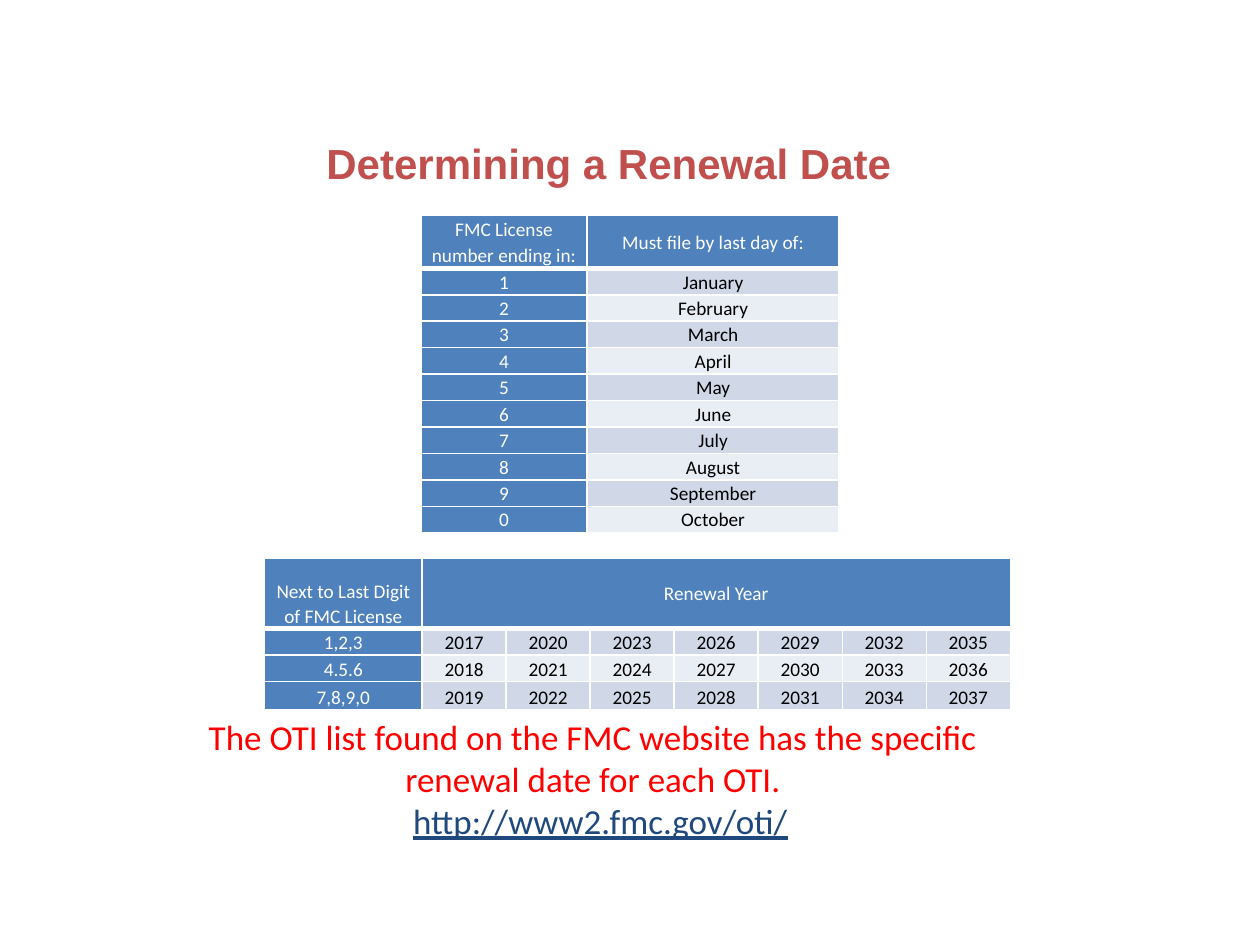
from lxml import etree
from pptx import Presentation
from pptx.dml.color import RGBColor
from pptx.enum.text import MSO_ANCHOR, PP_ALIGN
from pptx.oxml.ns import qn
from pptx.util import Inches, Pt

LEFT, CENTER = PP_ALIGN.LEFT, PP_ALIGN.CENTER
TOP, MIDDLE, BOTTOM = MSO_ANCHOR.TOP, MSO_ANCHOR.MIDDLE, MSO_ANCHOR.BOTTOM
TITLE_ONLY = 5
WHITE, BLACK, BLUE = "FFFFFF", "000000", "4F81BD"
BANDS = ("E9EDF4", "D0D8E8")

MONTHS = ["January", "February", "March", "April", "May", "June", "July",
          "August", "September", "October"]
MONTH_ROWS = [["FMC License number ending in:", "Must file by last day of:"]]
MONTH_ROWS += [[str(number % 10), month] for number, month in enumerate(MONTHS, 1)]

YEAR_ROWS = [["Next to Last Digit of FMC License", "Renewal Year"]]
YEAR_ROWS += [[digits] + [str(year) for year in range(first, first + 21, 3)]
              for first, digits in enumerate(["1,2,3", "4.5.6", "7,8,9,0"], 2017)]


def color(value):
    return RGBColor.from_string(value)


def style_paragraph(para, size, tint, font="Calibri", align=CENTER, spacing=None):
    para.alignment = align
    if spacing:
        para.line_spacing = spacing
    para.font.name = font
    para.font.size = Pt(size)
    para.font.color.rgb = color(tint)


def add_borders(cell, bottom_width):
    properties = cell._tc.get_or_add_tcPr()
    for side, width in (("L", 1), ("R", 1), ("T", 1), ("B", bottom_width)):
        line = etree.SubElement(properties, qn("a:ln" + side), w=str(Pt(width)))
        fill = etree.SubElement(line, qn("a:solidFill"))
        etree.SubElement(fill, qn("a:srgbClr"), val=WHITE)


def style_cell(cell, text, is_header, fill, tint, anchor):
    add_borders(cell, 3 if is_header else 1)
    cell.fill.solid()
    cell.fill.fore_color.rgb = color(fill)
    cell.margin_left = cell.margin_right = Inches(0.07)
    cell.margin_top = cell.margin_bottom = 0
    cell.vertical_anchor = anchor
    cell.text = text
    style_paragraph(cell.text_frame.paragraphs[0], 11, tint, spacing=1.07)


def add_banded_table(page, box, rows, column_widths, row_heights, anchor):
    """Blue header row and first column; a short header row spans the rest."""
    column_count = len(column_widths)
    table = page.shapes.add_table(len(rows), column_count, *map(Inches, box)).table
    for column, width in zip(table.columns, column_widths):
        column.width = Inches(width)
    for row, height in zip(table.rows, row_heights):
        row.height = Inches(height)
    for r, texts in enumerate(rows):
        for c in range(column_count):
            blue = r == 0 or c == 0
            style_cell(table.cell(r, c), texts[c] if c < len(texts) else "", r == 0,
                       BLUE if blue else BANDS[r % 2], WHITE if blue else BLACK,
                       MIDDLE if r == 0 and c else anchor)
    if len(rows[0]) < column_count:
        table.cell(0, len(rows[0]) - 1).merge(table.cell(0, column_count - 1))


def place_title(page, box):
    title = page.shapes.title
    title.left, title.top, title.width, title.height = map(Inches, box)
    title.text_frame.text = "Determining a Renewal Date"
    title.text_frame.vertical_anchor = TOP
    para = title.text_frame.paragraphs[0]
    style_paragraph(para, 24, "C0504D", "Arial", LEFT, 1.4)
    para.font.bold = True


def add_website_note(page, box):
    frame = page.shapes.add_textbox(*map(Inches, box)).text_frame
    frame.word_wrap = True
    note = frame.paragraphs[0]
    note.text = ("The OTI list found on the FMC website has the specific "
                 "renewal date for each OTI.")
    style_paragraph(note, 20, "FF0000")
    address = frame.add_paragraph()
    address.text = "http://www2.fmc.gov/oti/"
    address._p.get_or_add_pPr().set("marL", str(Inches(0.12)))
    style_paragraph(address, 20, "1F497D")
    address.font.underline = True


def main():
    deck = Presentation()
    deck.slide_width, deck.slide_height = Inches(10), Inches(7.5)
    page = deck.slides.add_slide(deck.slide_layouts[TITLE_ONLY])
    place_title(page, (2.49, 0.88, 4.89, 1.51))
    add_banded_table(page, (2.1, 4.43, 5.92, 1.2), YEAR_ROWS,
                     [1.25] + [(5.92 - 1.25) / 7] * 7, [0.56, 0.21, 0.21, 0.22], BOTTOM)
    add_banded_table(page, (3.34, 1.71, 3.32, 2.51), MONTH_ROWS,
                     [1.32, 2], [0.42] + [0.21] * 10, MIDDLE)
    add_website_note(page, (1.11, 5.63, 7.19, 1.41))
    deck.save("out.pptx")


if __name__ == "__main__":
    main()
